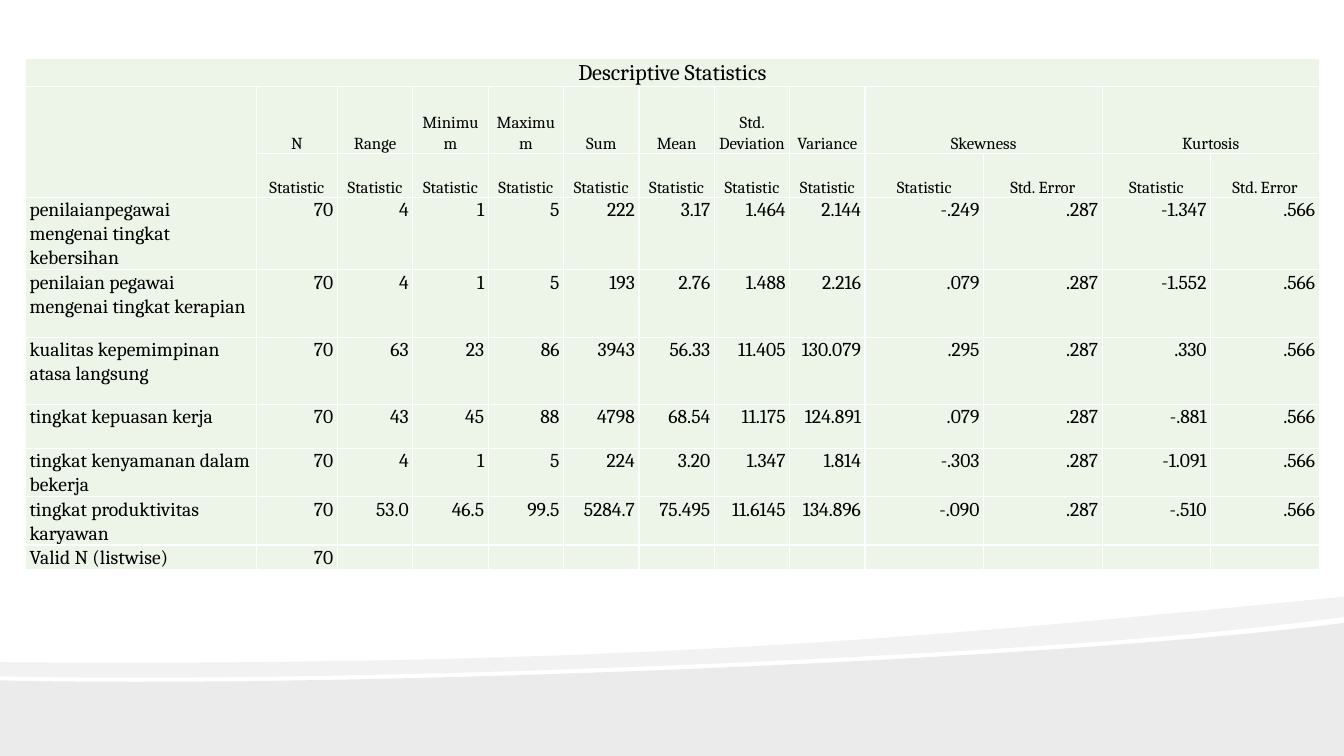
from dataclasses import dataclass

from lxml import etree
from pptx import Presentation
from pptx import util as u
from pptx.dml.color import RGBColor
from pptx.enum import text
from pptx.oxml import ns

SLIDE_WIDTH = u.Inches(13.33)
SLIDE_HEIGHT = u.Inches(7.5)
FONT = "Cambria"
CELL_FILL = "EDF4E8"
BLACK = "000000"
WHITE = "FFFFFF"

Point = tuple[float, float]


@dataclass
class Wave:
    opacity: int
    start: Point
    segments: list[list[Point]]


@dataclass
class CellStyle:
    size: int
    alignment: text.PP_ALIGN
    anchor: text.MSO_ANCHOR


@dataclass
class Span:
    top: int
    left: int
    bottom: int
    right: int


WAVES = [
    Wave(8, (100, 82.4), [
        [(100, 100)],
        [(0, 100)],
        [(0, 90)],
        [(26.4, 91.07), (78.2, 87.33), (100, 82.4)],
    ]),
    Wave(5, (100, 78.93), [
        [(100, 81.6)],
        [(94.1, 83.07), (86.2, 84.4), (77.2, 85.47)],
        [(52.4, 88.4), (19.4, 90.27), (0, 89.47)],
        [(0, 87.6)],
        [(48.9, 88.27), (72.8, 83.6), (100, 78.93)],
    ]),
]

TITLE = CellStyle(16, text.PP_ALIGN.CENTER, text.MSO_ANCHOR.MIDDLE)
HEADING = CellStyle(12, text.PP_ALIGN.CENTER, text.MSO_ANCHOR.BOTTOM)
VARIABLE = CellStyle(14, text.PP_ALIGN.LEFT, text.MSO_ANCHOR.TOP)
FIGURE = CellStyle(14, text.PP_ALIGN.RIGHT, text.MSO_ANCHOR.TOP)

COLUMN_SHARES = [17.18, 6.03] + [5.61] * 7 + [8.82] * 2 + [8.08] * 2
ROW_SHARES = [2.93, 8.9, 5.85] + [8.9] * 3 + [5.85] * 3 + [2.93]
TABLE_HEIGHT_SHARE = 68.93

ROWS = [
    ["Descriptive Statistics"],
    ["", "N", "Range", "Minimum", "Maximum", "Sum", "Mean", "Std. Deviation",
     "Variance", "Skewness", "", "Kurtosis", ""],
    [""] + ["Statistic"] * 9 + ["Std. Error", "Statistic", "Std. Error"],
    ["penilaianpegawai mengenai tingkat kebersihan", "70", "4", "1", "5", "222",
     "3.17", "1.464", "2.144", "-.249", ".287", "-1.347", ".566"],
    ["penilaian pegawai mengenai tingkat kerapian", "70", "4", "1", "5", "193",
     "2.76", "1.488", "2.216", ".079", ".287", "-1.552", ".566"],
    ["kualitas kepemimpinan atasa langsung", "70", "63", "23", "86", "3943",
     "56.33", "11.405", "130.079", ".295", ".287", ".330", ".566"],
    ["tingkat kepuasan kerja", "70", "43", "45", "88", "4798",
     "68.54", "11.175", "124.891", ".079", ".287", "-.881", ".566"],
    ["tingkat kenyamanan dalam bekerja", "70", "4", "1", "5", "224",
     "3.20", "1.347", "1.814", "-.303", ".287", "-1.091", ".566"],
    ["tingkat produktivitas karyawan", "70", "53.0", "46.5", "99.5", "5284.7",
     "75.495", "11.6145", "134.896", "-.090", ".287", "-.510", ".566"],
    ["Valid N (listwise)", "70"],
]

SPANS = [Span(0, 0, 0, 12), Span(1, 0, 2, 0), Span(1, 9, 1, 10), Span(1, 11, 1, 12)]


def across(share: float) -> int:
    return round(SLIDE_WIDTH * share / 100)


def down(share: float) -> int:
    return round(SLIDE_HEIGHT * share / 100)


def colour(value: str) -> RGBColor:
    return RGBColor.from_string(value)


def add_element(parent, tag: str, **attributes: str):
    return etree.SubElement(parent, ns.qn(tag), attributes)


def bend_outline(shape, segments: list[list[Point]]) -> None:
    lines = iter(shape._element.findall(".//" + ns.qn("a:lnTo")))
    for segment in segments:
        pieces = [next(lines) for _ in segment]
        if len(pieces) == 3:
            bend = etree.Element(ns.qn("a:cubicBezTo"))
            pieces[0].addprevious(bend)
            for piece in pieces:
                bend.append(piece[0])
                piece.getparent().remove(piece)


def draw_wave(slide, wave: Wave) -> None:
    outline = [wave.start] + [point for segment in wave.segments for point in segment]
    vertices = [(across(x), down(y)) for x, y in outline]
    builder = slide.shapes.build_freeform(*vertices[0])
    builder.add_line_segments(vertices[1:])
    shape = builder.convert_to_shape()
    bend_outline(shape, wave.segments)
    shape.shadow.inherit = False
    shape.line.fill.background()
    shape.fill.solid()
    shape.fill.fore_color.rgb = colour(BLACK)
    fill_colour = shape._element.spPr.find(".//" + ns.qn("a:srgbClr"))
    add_element(fill_colour, "a:alpha", val=str(wave.opacity * 1000))


def style_for(row: int, column: int) -> CellStyle:
    if row == 0:
        return TITLE
    if row < 3:
        return HEADING
    return FIGURE if column else VARIABLE


def draw_borders(cell) -> None:
    properties = cell._tc.get_or_add_tcPr()
    for side in ("a:lnL", "a:lnR", "a:lnT", "a:lnB"):
        line = add_element(properties, side, w=str(u.Pt(1)))
        add_element(add_element(line, "a:solidFill"), "a:srgbClr", val=WHITE)


def fill_cell(cell, words: str, style: CellStyle) -> None:
    draw_borders(cell)
    cell.fill.solid()
    cell.fill.fore_color.rgb = colour(CELL_FILL)
    cell.margin_left = cell.margin_right = cell.margin_top = cell.margin_bottom = 0
    cell.vertical_anchor = style.anchor
    paragraph = cell.text_frame.paragraphs[0]
    paragraph.alignment = style.alignment
    paragraph.line_spacing = 1.07
    indent = str(u.Inches(0.04))
    paragraph._p.get_or_add_pPr().set("marL", indent)
    paragraph._p.get_or_add_pPr().set("marR", indent)
    if not words:
        add_element(paragraph._p, "a:endParaRPr", sz=str(style.size * 100))
        return
    run = paragraph.add_run()
    run.text = words
    run.font.size = u.Pt(style.size)
    run.font.name = FONT
    run.font.color.rgb = colour(BLACK)


def draw_statistics(slide) -> None:
    frame = slide.shapes.add_table(
        len(ROW_SHARES), len(COLUMN_SHARES), across(1.9), down(7.75),
        across(sum(COLUMN_SHARES)), down(TABLE_HEIGHT_SHARE))
    table = frame.table
    table.first_row = table.horz_banding = False
    for column, share in zip(table.columns, COLUMN_SHARES):
        column.width = across(share)
    for row, share in zip(table.rows, ROW_SHARES):
        row.height = down(share)
    frame.height = down(TABLE_HEIGHT_SHARE)
    for row, words in enumerate(ROWS):
        padded = words + [""] * (len(COLUMN_SHARES) - len(words))
        for column, value in enumerate(padded):
            fill_cell(table.cell(row, column), value, style_for(row, column))
    for span in SPANS:
        table.cell(span.top, span.left).merge(table.cell(span.bottom, span.right))


def main() -> None:
    presentation = Presentation()
    presentation.slide_width = SLIDE_WIDTH
    presentation.slide_height = SLIDE_HEIGHT
    slide = presentation.slides.add_slide(presentation.slide_layouts[6])
    for wave in WAVES:
        draw_wave(slide, wave)
    draw_statistics(slide)
    presentation.save("out.pptx")


if __name__ == "__main__":
    main()
